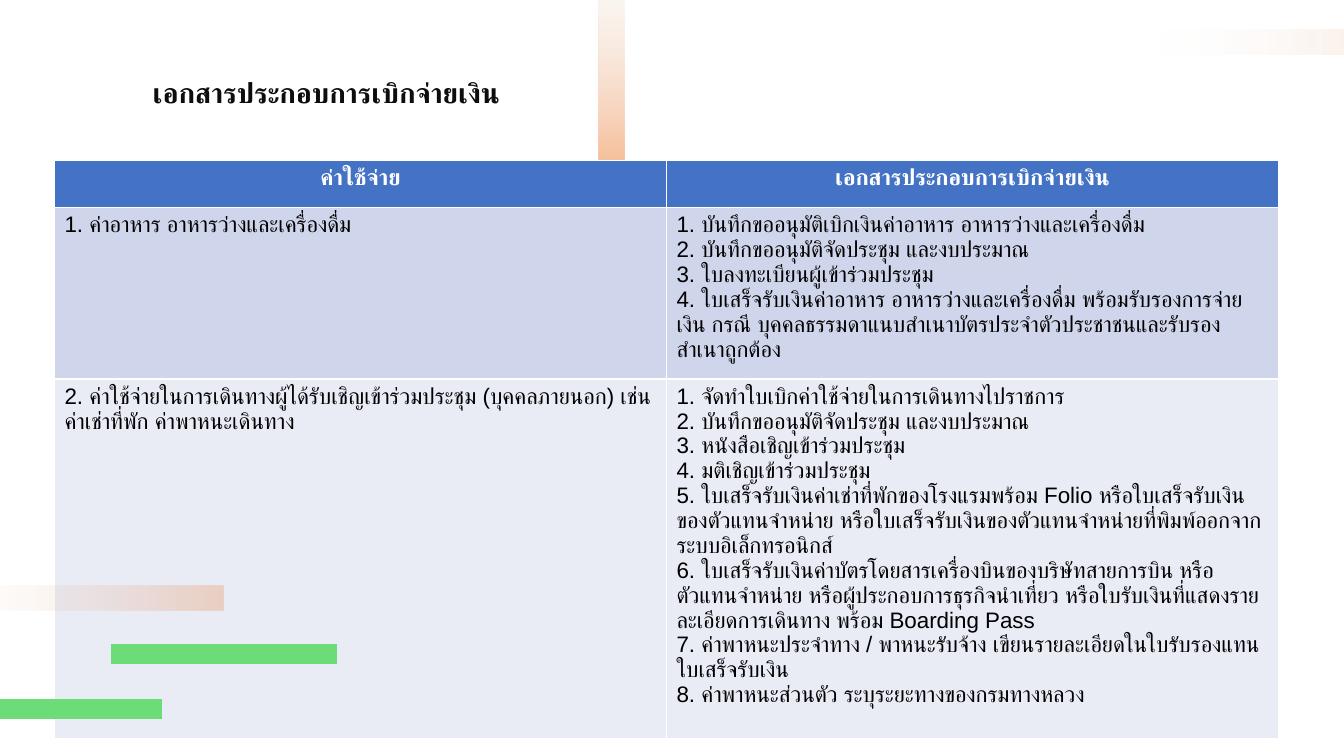
import pptx
import pptx.util
import pptx.oxml
import pptx.oxml.ns
import pptx.dml.color
import pptx.enum.shapes
import pptx.enum.text
from lxml import etree

Inches = pptx.util.Inches
Pt = pptx.util.Pt
qn = pptx.oxml.ns.qn
Align = pptx.enum.text.PP_ALIGN

HUES = {
    "white": "FFFFFF", "ink": "0D0D0D", "black": "000000",
    "head": "4472C4", "dark": "CFD5EA", "light": "E9EBF5",
    "gray": "E7E6E6", "orange": "ED7D31", "green": "6BDC77",
}
TITLE = "เอกสารประกอบการเบิกจ่ายเงิน"
HEADS = ["ค่าใช้จ่าย", TITLE]
MEETING = "บันทึกขออนุมัติจัดประชุม และงบประมาณ"
COSTS = [
    ("ค่าอาหาร อาหารว่างและเครื่องดื่ม", [
        "บันทึกขออนุมัติเบิกเงินค่าอาหาร อาหารว่างและเครื่องดื่ม",
        MEETING,
        "ใบลงทะเบียนผู้เข้าร่วมประชุม",
        "ใบเสร็จรับเงินค่าอาหาร อาหารว่างและเครื่องดื่ม พร้อมรับรองการจ่ายเงิน "
        "กรณี บุคคลธรรมดาแนบสำเนาบัตรประจำตัวประชาชนและรับรองสำเนาถูกต้อง",
    ]),
    ("ค่าใช้จ่ายในการเดินทางผู้ได้รับเชิญเข้าร่วมประชุม (บุคคลภายนอก) เช่น "
     "ค่าเช่าที่พัก ค่าพาหนะเดินทาง", [
        "จัดทำใบเบิกค่าใช้จ่ายในการเดินทางไปราชการ",
        MEETING,
        "หนังสือเชิญเข้าร่วมประชุม",
        "มติเชิญเข้าร่วมประชุม",
        "ใบเสร็จรับเงินค่าเช่าที่พักของโรงแรมพร้อม Folio "
        "หรือใบเสร็จรับเงินของตัวแทนจำหน่าย "
        "หรือใบเสร็จรับเงินของตัวแทนจำหน่ายที่พิมพ์ออกจากระบบอิเล็กทรอนิกส์",
        "ใบเสร็จรับเงินค่าบัตรโดยสารเครื่องบินของบริษัทสายการบิน "
        "หรือตัวแทนจำหน่าย หรือผู้ประกอบการธุรกิจนำเที่ยว "
        "หรือใบรับเงินที่แสดงรายละเอียดการเดินทาง พร้อม Boarding Pass",
        "ค่าพาหนะประจำทาง / พาหนะรับจ้าง "
        "เขียนรายละเอียดในใบรับรองแทนใบเสร็จรับเงิน",
        "ค่าพาหนะส่วนตัว ระบุระยะทางของกรมทางหลวง",
    ]),
]
HEIGHTS = [0.47, 1.67, 3.23]


def color(name):
    return pptx.dml.color.RGBColor.from_string(HUES[name])


def write(frame, lines, size=16, font="Arial", hue="black", bold=False,
          align=Align.LEFT, gap=None):
    frame.word_wrap = True
    for i, line in enumerate(lines):
        para = frame.paragraphs[0] if i == 0 else frame.add_paragraph()
        para.alignment = align
        para.line_spacing = gap
        run = para.add_run()
        run.text = line
        run.font.size = Pt(size)
        run.font.name = font
        run.font.bold = bold
        run.font.color.rgb = color(hue)
        etree.SubElement(run.font._element, qn("a:cs"), typeface=font)


def add_title(slide):
    box = slide.shapes.add_textbox(
        Inches(0.54), Inches(0.54), Inches(5.39), Inches(0.79))
    box.text_frame.vertical_anchor = pptx.enum.text.MSO_ANCHOR.MIDDLE
    write(box.text_frame, [TITLE], size=20, font="Calibri", hue="ink",
          bold=True, align=Align.CENTER, gap=0.9)


def add_fade(slide, left, top, height, start, alpha, turn=0):
    bar = slide.shapes.add_shape(
        pptx.enum.shapes.MSO_SHAPE.RECTANGLE,
        Inches(left), Inches(top), Inches(0.25), Inches(height))
    bar.shadow.inherit = False
    bar.rotation = turn
    bar.line.fill.background()
    bar.fill.gradient()
    grad = bar._element.spPr.find(qn("a:gradFill"))
    grad.find(qn("a:lin")).set("ang", "5400000")
    stops = grad.find(qn("a:gsLst"))
    for old in list(stops):
        stops.remove(old)
    for place, hue, clear in [(start, "gray", 0), (100, "orange", alpha)]:
        stop = etree.SubElement(stops, qn("a:gs"), pos=str(place * 1000))
        tint = etree.SubElement(stop, qn("a:srgbClr"), val=HUES[hue])
        etree.SubElement(tint, qn("a:alpha"), val=str(clear * 1000))


def add_band(slide, start, end, y):
    band = slide.shapes.add_connector(
        pptx.enum.shapes.MSO_CONNECTOR.STRAIGHT,
        Inches(start), Inches(y), Inches(end), Inches(y))
    band.line.color.rgb = color("green")
    band.line.width = Pt(14.25)
    etree.SubElement(band._element.spPr, qn("a:effectLst"))


def fill_cell(cell, lines, back, **style):
    cell.fill.solid()
    cell.fill.fore_color.rgb = color(back)
    write(cell.text_frame, lines, **style)


def add_costs(slide):
    table = slide.shapes.add_table(
        len(HEIGHTS), len(HEADS), Inches(0.54), Inches(1.59),
        Inches(12.14), Inches(sum(HEIGHTS))).table
    for row, height in zip(table.rows, HEIGHTS):
        row.height = Inches(height)
    for col, head in enumerate(HEADS):
        fill_cell(table.cell(0, col), [head], "head", hue="white",
                  bold=True, align=Align.CENTER)
    for row, (cost, papers) in enumerate(COSTS, 1):
        back = "dark" if row % 2 else "light"
        fill_cell(table.cell(row, 0), [f"{row}. {cost}"], back)
        listed = [f"{i}. {paper}" for i, paper in enumerate(papers, 1)]
        fill_cell(table.cell(row, 1), listed, back)


def main():
    deck = pptx.Presentation()
    deck.slide_width = Inches(13.33)
    deck.slide_height = Inches(7.5)
    slide = deck.slides.add_slide(deck.slide_layouts[6])
    add_fade(slide, 12.83, -1.33, 3.49, start=8, alpha=26, turn=270)
    add_fade(slide, 5.94, -0.85, 2.43, start=2, alpha=48)
    add_title(slide)
    add_costs(slide)
    add_band(slide, 3.34, 1.1, 6.49)
    add_fade(slide, 0.35, 4.19, 3.49, start=8, alpha=26, turn=270)
    add_band(slide, 1.61, -2.52, 7.03)
    deck.save("out.pptx")


if __name__ == "__main__":
    main()
